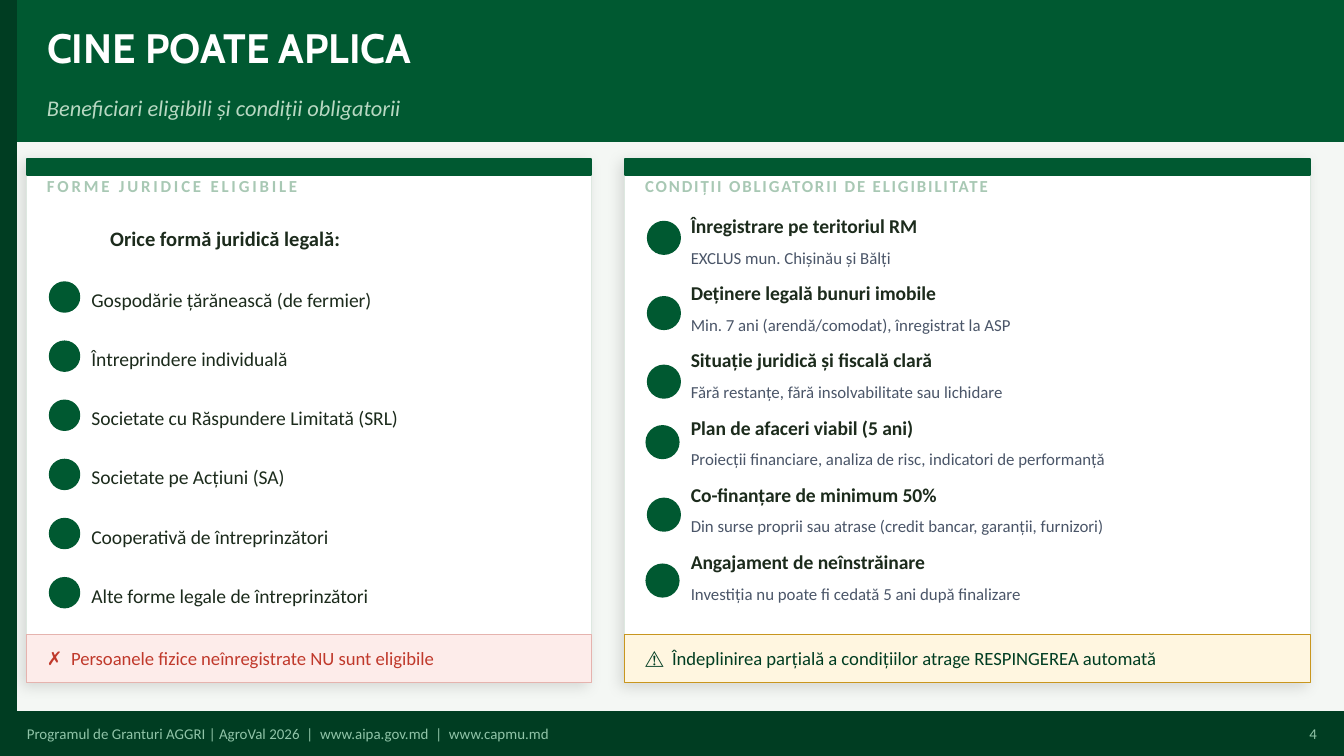
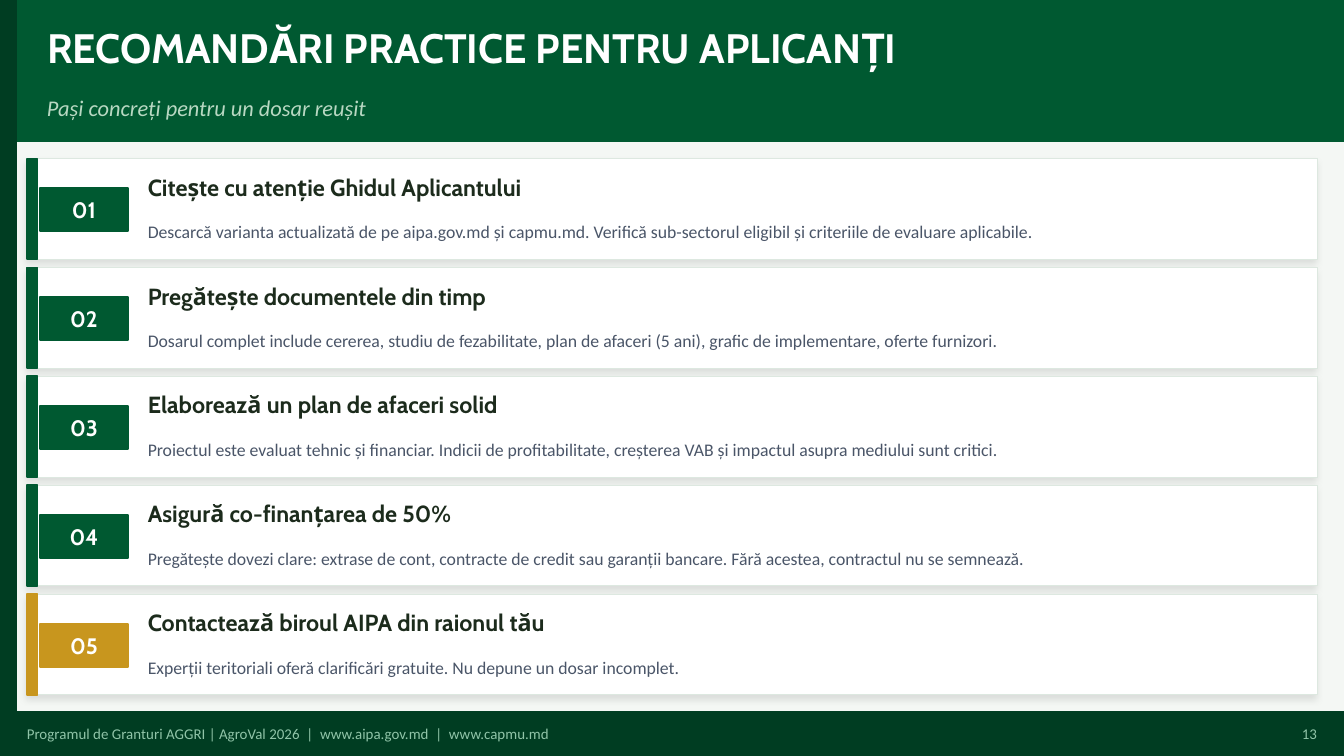
from pptx import Presentation
from pptx.dml.color import RGBColor as Rgb
from pptx.enum.shapes import MSO_SHAPE as Form
from pptx.enum.text import MSO_ANCHOR as Anchor, MSO_AUTO_SIZE as Fit, PP_ALIGN as Align
from pptx.oxml.ns import qn
from pptx.util import Inches, Pt
from lxml.etree import SubElement as Sub

WIDE = 10
HIGH = WIDE * 9 / 16
TOP = 1.18

HUES = {
    "green": "005931",
    "dark": "003D22",
    "page": "F4F7F4",
    "white": "FFFFFF",
    "mint": "B8D8C2",
    "foot": "90C4A8",
    "label": "A8C8B4",
    "edge": "DDE8E0",
    "ink": "1C2B1C",
    "slate": "4A5568",
    "gold": "C8961E",
    "cream": "FFF6E0",
    "blush": "FDECEA",
    "rose": "E5B3AE",
    "red": "C0392B",
}

STYLES = {
    "title": ("white", {"name": "Cabin", "size": Pt(22), "bold": True}),
    "sub": ("mint", {"name": "Calibri", "size": Pt(12), "italic": True}),
    "foot": ("foot", {"name": "Calibri", "size": Pt(8)}),
    "label": ("label", {"name": "Calibri", "size": Pt(9), "bold": True}),
    "lead": ("ink", {"name": "Calibri", "size": Pt(11), "bold": True}),
    "item": ("ink", {"name": "Calibri", "size": Pt(10.5)}),
    "rule": ("ink", {"name": "Calibri", "size": Pt(10.5), "bold": True}),
    "note": ("slate", {"name": "Calibri", "size": Pt(9)}),
    "alert": ("red", {"name": "Calibri", "size": Pt(10)}),
    "warn": ("dark", {"name": "Calibri", "size": Pt(10)}),
    "badge": ("white", {"name": "Cabin", "size": Pt(12), "bold": True}),
    "head": ("ink", {"name": "Cabin", "size": Pt(12.5), "bold": True}),
    "body": ("slate", {"name": "Calibri", "size": Pt(9.5)}),
}

FOOTER = "Programul de Granturi AGGRI | AgroVal 2026  |  www.aipa.gov.md  |  www.capmu.md"

FORMS = [
    "Gospodărie țărănească (de fermier)",
    "Întreprindere individuală",
    "Societate cu Răspundere Limitată (SRL)",
    "Societate pe Acțiuni (SA)",
    "Cooperativă de întreprinzători",
    "Alte forme legale de întreprinzători",
]

RULES = [
    (0.17, 0.47, "Înregistrare pe teritoriul RM", "EXCLUS mun. Chișinău și Bălți"),
    (0.17, 1.03, "Deținere legală bunuri imobile",
     "Min. 7 ani (arendă/comodat), înregistrat la ASP"),
    (0.17, 1.54, "Situație juridică și fiscală clară",
     "Fără restanțe, fără insolvabilitate sau lichidare"),
    (0.16, 1.99, "Plan de afaceri viabil (5 ani)",
     "Proiecții financiare, analiza de risc, indicatori de performanță"),
    (0.17, 2.53, "Co-finanțare de minimum 50%",
     "Din surse proprii sau atrase (credit bancar, garanții, furnizori)"),
    (0.16, 3.02, "Angajament de neînstrăinare",
     "Investiția nu poate fi cedată 5 ani după finalizare"),
]

TIPS = [
    ("green", "Citește cu atenție Ghidul Aplicantului",
     "Descarcă varianta actualizată de pe aipa.gov.md și capmu.md. "
     "Verifică sub-sectorul eligibil și criteriile de evaluare aplicabile."),
    ("green", "Pregătește documentele din timp",
     "Dosarul complet include cererea, studiu de fezabilitate, plan de afaceri (5 ani), "
     "grafic de implementare, oferte furnizori."),
    ("green", "Elaborează un plan de afaceri solid",
     "Proiectul este evaluat tehnic și financiar. Indicii de profitabilitate, "
     "creșterea VAB și impactul asupra mediului sunt critici."),
    ("green", "Asigură co-finanțarea de 50%",
     "Pregătește dovezi clare: extrase de cont, contracte de credit sau garanții bancare. "
     "Fără acestea, contractul nu se semnează."),
    ("gold", "Contactează biroul AIPA din raionul tău",
     "Experții teritoriali oferă clarificări gratuite. Nu depune un dosar incomplet."),
]


def hue(name):
    return Rgb.from_string(HUES[name])


def place(shape, box):
    for key, size in zip(("left", "top", "width", "height"), box):
        setattr(shape, key, Inches(size))


def write(shape, text, style, align=Align.LEFT, track=0):
    tint, form = STYLES[style]
    frame = shape.text_frame
    traits = {
        "word_wrap": True, "auto_size": Fit.NONE, "vertical_anchor": Anchor.MIDDLE,
        "margin_left": 0, "margin_top": 0, "margin_right": 0, "margin_bottom": 0,
    }
    for key, value in traits.items():
        setattr(frame, key, value)
    para = frame.paragraphs[0]
    para.alignment = align
    run = para.add_run()
    run.text = text
    for key, value in form.items():
        setattr(run.font, key, value)
    run.font.color.rgb = hue(tint)
    if track:
        run.font._element.set("spc", str(track))


def label(slide, box, text, style, **extra):
    write(slide.shapes.add_textbox(*map(Inches, box)), text, style, **extra)


def block(slide, box, fill, line=None, weight=1, form=Form.RECTANGLE):
    shape = slide.shapes.add_shape(form, *map(Inches, box))
    shape.shadow.inherit = False
    shape.fill.solid()
    shape.fill.fore_color.rgb = hue(fill)
    shape.line.color.rgb = hue(line or fill)
    shape.line.width = Pt(weight)
    return shape


def dot(slide, x, y, size):
    block(slide, (x, y, size, size), "green", form=Form.OVAL)


def card(slide, box, alpha, blur, dist):
    shape = block(slide, box, "white", "edge", 0.5)
    glow = shape._element.spPr.find(qn("a:effectLst"))
    cast = Sub(glow, qn("a:outerShdw"), blurRad=str(Pt(blur)), dist=str(Pt(dist)),
               dir=str(135 * 60000), algn="bl", rotWithShape="0")
    tone = Sub(cast, qn("a:srgbClr"), val="000000")
    Sub(tone, qn("a:alpha"), val=str(alpha * 1000))


def base(deck, title, sub, number):
    slide = deck.slides.add_slide(deck.slide_layouts[5])
    back = slide.background.fill
    back.solid()
    back.fore_color.rgb = hue("page")
    block(slide, (0, 0, WIDE, 1.05), "green")
    block(slide, (0, 0, 0.12, HIGH), "dark")
    head = slide.shapes.title
    slide.shapes._spTree.append(head._element)
    place(head, (0.35, 0.1, 8.5, 0.5))
    write(head, title, "title")
    label(slide, (0.35, 0.62, 9, 0.36), sub, "sub")
    block(slide, (0, 5.3, WIDE, HIGH - 5.3), "dark")
    label(slide, (0.2, 5.31, 8.5, 0.3), FOOTER, "foot")
    label(slide, (9.2, 5.31, 0.6, 0.3), str(number), "foot", align=Align.RIGHT)
    return slide


def panel(slide, box, name, track):
    x, y, w, h = box
    card(slide, box, 12, 8, 3)
    block(slide, (x, y, w, 0.12), "green")
    label(slide, (x + 0.15, y + 0.04, w - 0.3, 0.32), name, "label", track=track)


def strip(slide, box, text, style, fill, line):
    x, y, w, h = box
    y += h - 0.36
    block(slide, (x, y, w, 0.36), fill, line, 0.5)
    label(slide, (x + 0.15, y, w - 0.3, 0.36), text, style)


def forms(slide, box):
    x, y, w, h = box
    panel(slide, box, "FORME JURIDICE ELIGIBILE", 150)
    label(slide, (x + 0.62, y + 0.42, 3.4, 0.35), "Orice formă juridică legală:", "lead")
    for i, text in enumerate(FORMS):
        row = y + 0.89 + 0.44 * i
        dot(slide, x + 0.17, row + 0.03, 0.22)
        label(slide, (x + 0.48, row, w - 0.65, 0.32), text, "item")
    strip(slide, box, "✗  Persoanele fizice neînregistrate NU sunt eligibile",
          "alert", "blush", "rose")


def rules(slide, box):
    x, y, w, h = box
    panel(slide, box, "CONDIȚII OBLIGATORII DE ELIGIBILITATE", 100)
    for i, (dx, dy, name, note) in enumerate(RULES):
        row = y + 0.38 + 0.5 * i
        dot(slide, x + dx, y + dy, 0.24)
        label(slide, (x + 0.49, row, w - 0.7, 0.24), name, "rule")
        label(slide, (x + 0.49, row + 0.24, w - 0.7, 0.23), note, "note")
    strip(slide, box, "⚠  Îndeplinirea parțială a condițiilor atrage RESPINGEREA automată",
          "warn", "cream", "gold")


def tip(slide, box, number, tint, name, text):
    x, y, w, h = box
    card(slide, box, 10, 4, 2)
    block(slide, (x, y, 0.08, h), tint)
    mark = (x + 0.1, y + 0.22, 0.65, 0.32)
    block(slide, mark, tint)
    label(slide, mark, f"{number:02}", "badge", align=Align.CENTER)
    label(slide, (x + 0.9, y + 0.05, w - 1.1, 0.32), name, "head")
    label(slide, (x + 0.9, y + 0.38, w - 1.1, 0.33), text, "body")


def main():
    deck = Presentation()
    deck.slide_width, deck.slide_height = Inches(WIDE), Inches(HIGH)

    slide = base(deck, "CINE POATE APLICA",
                 "Beneficiari eligibili și condiții obligatorii", 4)
    forms(slide, (0.2, TOP, 4.2, 3.9))
    rules(slide, (4.65, TOP, 5.1, 3.9))

    slide = base(deck, "RECOMANDĂRI PRACTICE PENTRU APLICANȚI",
                 "Pași concreți pentru un dosar reușit", 13)
    for i, parts in enumerate(TIPS):
        tip(slide, (0.2, TOP + 0.81 * i, 9.6, 0.75), i + 1, *parts)

    deck.save("out.pptx")


if __name__ == "__main__":
    main()
